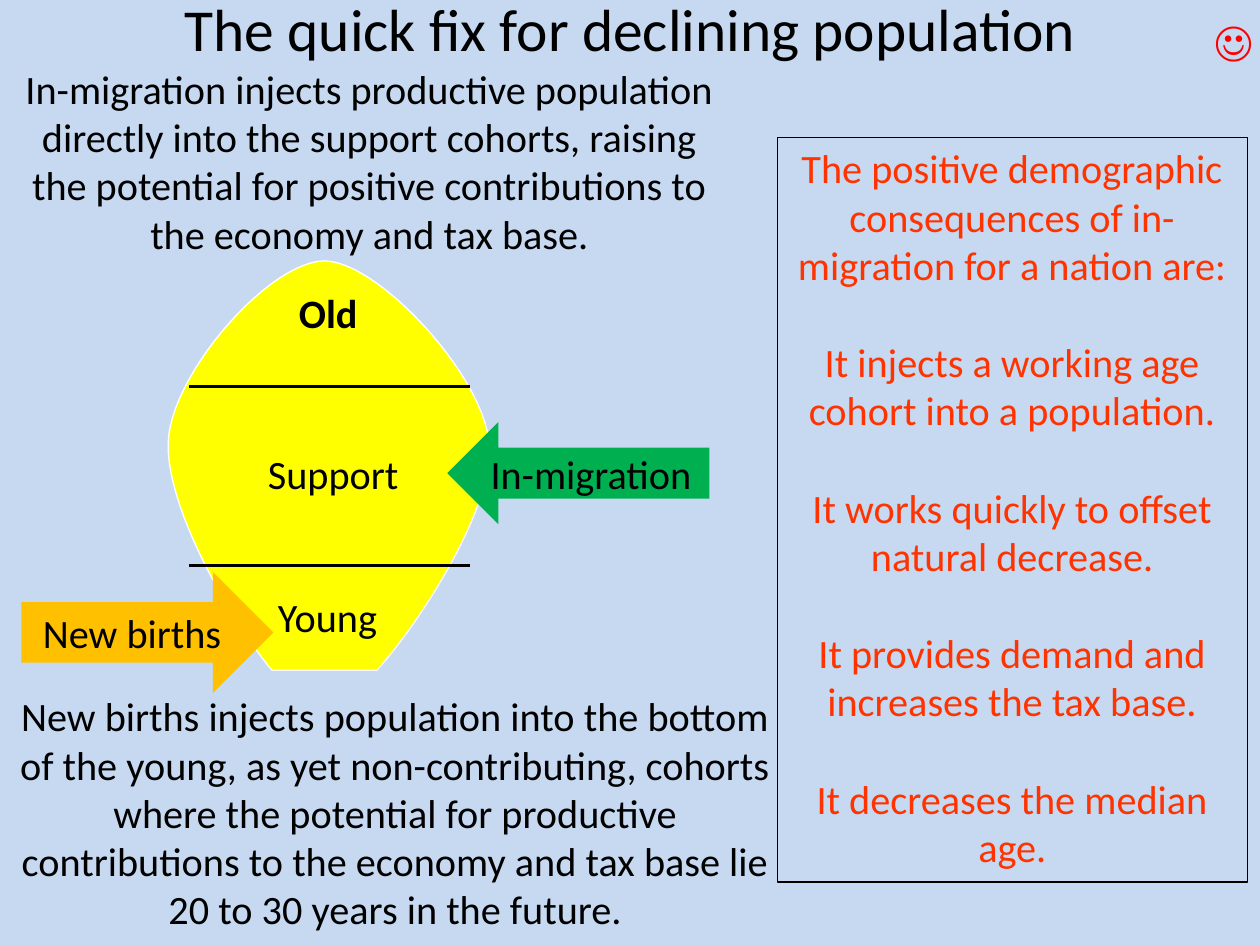
from pptx import Presentation
from pptx.dml.color import RGBColor
from pptx.enum.shapes import MSO_CONNECTOR, MSO_SHAPE
from pptx.enum.text import MSO_ANCHOR, MSO_AUTO_SIZE, PP_ALIGN
from pptx.oxml.ns import qn
from pptx.util import Inches, Pt
from lxml import etree

STRAIGHT = MSO_CONNECTOR.STRAIGHT
RECTANGLE = MSO_SHAPE.RECTANGLE
LEFT_ARROW, RIGHT_ARROW = MSO_SHAPE.LEFT_ARROW, MSO_SHAPE.RIGHT_ARROW
TOP, MIDDLE = MSO_ANCHOR.TOP, MSO_ANCHOR.MIDDLE
LEFT, CENTER = PP_ALIGN.LEFT, PP_ALIGN.CENTER
FIXED_SIZE = MSO_AUTO_SIZE.NONE
BLACK, RED, ORANGE_RED = "000000", "FF0000", "FF3300"
CURVE_STEPS = 24


def color(hex_string):
    return RGBColor.from_string(hex_string)


def write(box, lines, size=23, ink=BLACK, bold=False, wrap=True,
          anchor=TOP, align=CENTER, gap=0):
    """Fill a shape with one paragraph per line, gap points apart."""
    frame = box.text_frame
    frame.auto_size = FIXED_SIZE
    frame.word_wrap = wrap
    frame.vertical_anchor = anchor
    for index, line in enumerate(lines):
        para = frame.paragraphs[0] if index == 0 else frame.add_paragraph()
        para.text = line
        para.alignment = align
        para.space_before = Pt(gap if index else 0)
        for span in para.runs:
            span.font.name = "Calibri"
            span.font.size = Pt(size)
            span.font.bold = bold
            span.font.color.rgb = color(ink)


deck = Presentation()
deck.slide_width, deck.slide_height = Inches(10), Inches(7.5)
page = deck.slides.add_slide(deck.slide_layouts.get_by_name("Title Only"))
page.background.fill.solid()
page.background.fill.fore_color.rgb = color("C6D9F1")
shapes = page.shapes

# Title
title = shapes.title
title.left, title.top = Inches(0), Inches(0)
title.width, title.height = Inches(10), Inches(0.44)
write(title, ["The quick fix for declining population"], size=34, anchor=MIDDLE)

# Population outline: Bezier segments sampled as short straight lines
start = (2.16, 5.32)
curves = [
    ((1.89, 5.01), (1.27, 3.99), (1.34, 3.45)),
    ((1.41, 2.91), (2.15, 2.07), (2.58, 2.07)),
    ((3, 2.08), (3.81, 2.95), (3.88, 3.49)),
    ((3.95, 4.03), (3.27, 5.02), (2.99, 5.32)),
]
points = []
corner = start
for first, second, end in curves:
    for step in range(1, CURVE_STEPS + 1):
        t = step / CURVE_STEPS
        points.append(tuple(
            Inches((1 - t) ** 3 * a + 3 * (1 - t) ** 2 * t * b
                   + 3 * (1 - t) * t ** 2 * c + t ** 3 * d)
            for a, b, c, d in zip(corner, first, second, end)))
    corner = end
builder = shapes.build_freeform(Inches(start[0]), Inches(start[1]))
builder.add_line_segments(points, close=True)
population = builder.convert_to_shape()
population.shadow.inherit = False
population.fill.solid()
population.fill.fore_color.rgb = color("FFFF00")
population.line.color.rgb = color("FFFFFF")
population.line.width = Pt(0.75)

# Cohort boundaries
for y in (3.07, 4.49):
    boundary = shapes.add_connector(
        STRAIGHT, Inches(1.5), Inches(y), Inches(3.73), Inches(y))
    boundary.line.color.rgb = color(BLACK)
    boundary.line.width = Pt(1.5)
    etree.SubElement(boundary._element.spPr, qn("a:effectLst"))

# Cohort names and explanations
in_migration = (
    "In-migration injects productive population directly into the support "
    "cohorts, raising the potential for positive contributions to the economy "
    "and tax base.")
new_births = (
    "New births injects population into the bottom of the young, as yet "
    "non-contributing, cohorts where the potential for productive "
    "contributions to the economy and tax base lie 20 to 30 years in the future.")
for text, left, top, width, height, bold, wrap in [
    ("Support", 2.02, 3.52, 1.25, 0.45, False, False),
    ("Young", 2.1, 4.65, 1, 0.45, False, False),
    ("Old", 2.27, 2.24, 0.67, 0.45, True, False),
    (in_migration, 0, 0.46, 5.87, 1.65, False, True),
    (new_births, 0.01, 5.44, 6.26, 2.04, False, True),
]:
    box = shapes.add_textbox(
        Inches(left), Inches(top), Inches(width), Inches(height))
    write(box, [text], bold=bold, wrap=wrap)

# Arrows feeding the population
for kind, text, left, top, width, height, fill in [
    (LEFT_ARROW, "In-migration", 3.55, 3.35, 2.08, 0.81, "00B050"),
    (RIGHT_ARROW, "New births", 0.17, 4.54, 2, 0.96, "FFC000"),
]:
    arrow = shapes.add_shape(
        kind, Inches(left), Inches(top), Inches(width), Inches(height))
    arrow.shadow.inherit = False
    arrow.fill.solid()
    arrow.fill.fore_color.rgb = color(fill)
    arrow.line.fill.background()
    write(arrow, [text], anchor=MIDDLE)

# Consequences panel
panel = shapes.add_shape(
    RECTANGLE, Inches(6.17), Inches(1.09), Inches(3.73), Inches(5.91))
panel.shadow.inherit = False
panel.fill.background()
panel.line.color.rgb = color(BLACK)
panel.line.width = Pt(0.75)
write(panel, [
    "The positive demographic consequences of in-migration for a nation are:",
    "It injects a working age cohort into a population.",
    "It works quickly to offset natural decrease.",
    "It provides demand and increases the tax base.",
    "It decreases the median age.",
], ink=ORANGE_RED, gap=28)

# Smiley
smiley = shapes.add_textbox(Inches(9.54), Inches(0.11), Inches(0.49), Inches(0.46))
write(smiley, ["☺"], size=24, ink=RED, wrap=False, align=LEFT)
smiley.text_frame.paragraphs[0].line_spacing = 0.9

deck.save("out.pptx")
